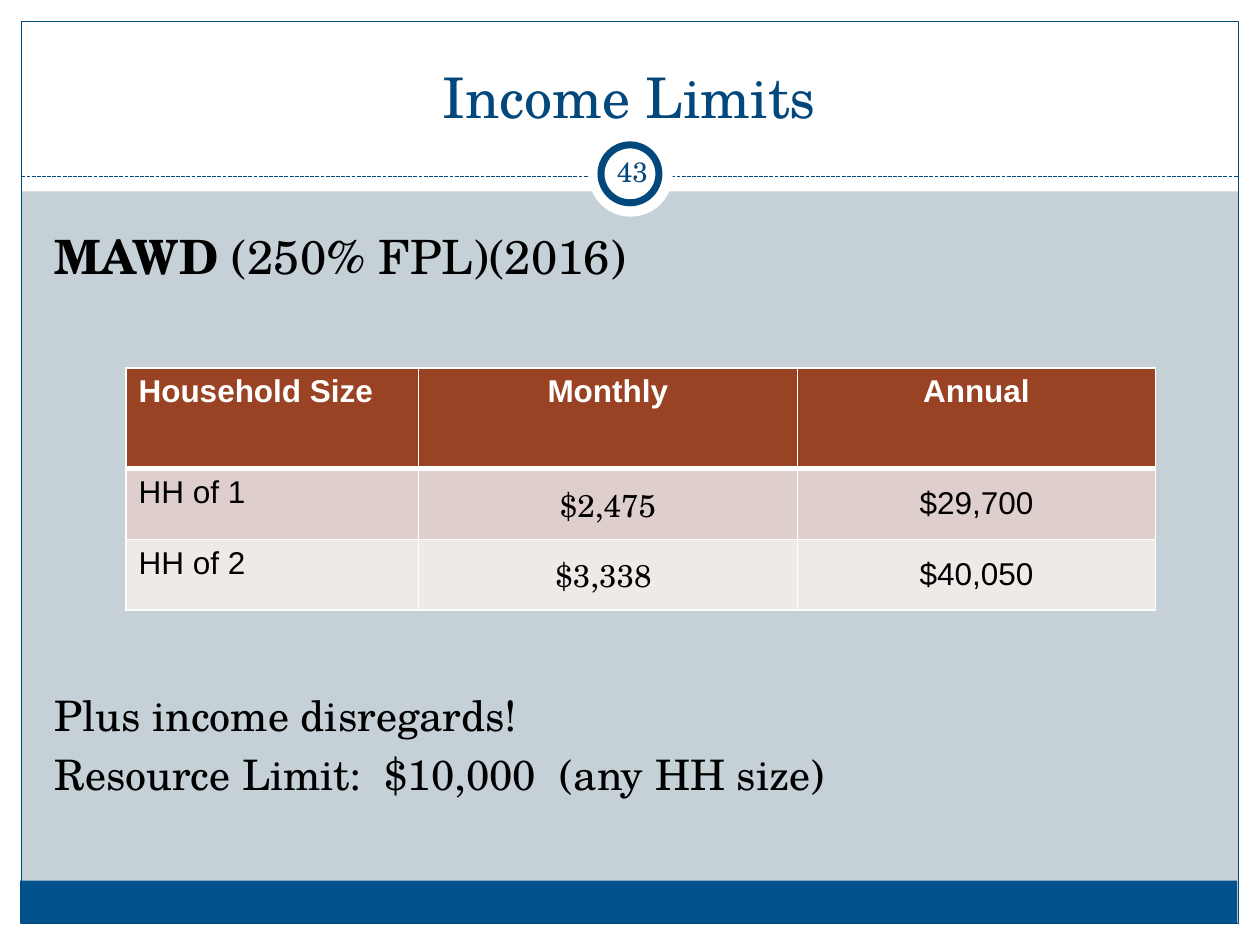
"""Build the Income Limits slide with its household table."""
import pptx
import pptx.util
import pptx.dml.color
import pptx.enum.dml
import pptx.enum.shapes
import pptx.enum.text
import pptx.oxml
import pptx.oxml.ns

Inches = pptx.util.Inches
Pt = pptx.util.Pt
ALIGN = pptx.enum.text.PP_ALIGN
ANCHOR = pptx.enum.text.MSO_ANCHOR
SHAPE = pptx.enum.shapes.MSO_SHAPE
SERIF, SANS = "TeX Gyre Schola", "Arial"
NAVY, WHITE, BLACK = "03487C", "FFFFFF", "000000"


def color(value):
    return pptx.dml.color.RGBColor.from_string(value)


def add_run(paragraph, text, value, **formats):
    run = paragraph.add_run()
    run.text = text
    run.font.color.rgb = color(value)
    for name, setting in formats.items():
        setattr(run.font, name, setting)


presentation = pptx.Presentation()
presentation.slide_width = Inches(10)
presentation.slide_height = Inches(7.5)
slide = presentation.slides.add_slide(presentation.slide_layouts[1])
slide.background.fill.solid()
slide.background.fill.fore_color.rgb = color("C5D1D7")
title, body = slide.placeholders

backdrop = [
    (SHAPE.RECTANGLE, 0, 7.33, 10, 0.17, WHITE, None),
    (SHAPE.RECTANGLE, 0, 0, 10, 1.52, WHITE, None),
    (SHAPE.RECTANGLE, 0, 0, 0.17, 7.5, WHITE, None),
    (SHAPE.RECTANGLE, 9.83, 0, 0.17, 7.5, WHITE, None),
    (SHAPE.RECTANGLE, 0.16, 6.99, 9.66, 0.34, "03528D", None),
    (SHAPE.RECTANGLE, 0.17, 0.17, 9.66, 7.16, None, 0.75),
    (SHAPE.OVAL, 4.67, 1.05, 0.67, 0.67, WHITE, None),
    (SHAPE.OVAL, 4.77, 1.15, 0.46, 0.46, WHITE, 4),
]
for kind, left, top, width, height, fill, line_width in backdrop:
    if kind == SHAPE.OVAL and line_width is None:
        divider = slide.shapes.add_connector(
            pptx.enum.shapes.MSO_CONNECTOR.STRAIGHT,
            Inches(0.17), Inches(1.4), Inches(9.83), Inches(1.4))
        divider.line.color.rgb = color(NAVY)
        divider.line.width = Pt(0.75)
        divider.line.dash_style = pptx.enum.dml.MSO_LINE.SQUARE_DOT
        divider.element.spPr.append(pptx.oxml.parse_xml(
            f'<a:effectLst {pptx.oxml.ns.nsdecls("a")}/>'))
    shape = slide.shapes.add_shape(kind, Inches(left), Inches(top), Inches(width), Inches(height))
    shape.shadow.inherit = False
    if fill:
        shape.fill.solid()
        shape.fill.fore_color.rgb = color(fill)
    else:
        shape.fill.background()
    if line_width:
        shape.line.color.rgb = color(NAVY)
        shape.line.width = Pt(line_width)
    else:
        shape.line.fill.background()

number = slide.shapes.add_textbox(0, 0, 0, 0)
text_places = [
    (title, 0.33, 0.25, 9.33, 0.83, ANCHOR.BOTTOM, 0.1),
    (body, 0.33, 1.75, 9.3, 5.42, ANCHOR.TOP, 0.1),
    (number, 4.77, 1.12, 0.5, 0.48, ANCHOR.MIDDLE, 0.05),
]
for shape, left, top, width, height, anchor, inset in text_places:
    shape.element.getparent().append(shape.element)
    shape.left, shape.top = Inches(left), Inches(top)
    shape.width, shape.height = Inches(width), Inches(height)
    frame_format = {
        "word_wrap": True, "auto_size": pptx.enum.text.MSO_AUTO_SIZE.NONE,
        "vertical_anchor": anchor, "margin_left": Inches(inset), "margin_right": Inches(inset),
        "margin_top": Inches(0.05), "margin_bottom": Inches(0.05),
    }
    for name, setting in frame_format.items():
        setattr(shape.text_frame, name, setting)

for shape, text, size in [(title, "Income Limits", 32), (number, "43", 16)]:
    paragraph = shape.text_frame.paragraphs[0]
    paragraph.alignment = ALIGN.CENTER
    add_run(paragraph, text, NAVY, name=SERIF, size=Pt(size))

body_lines = [
    (5.4, 27, [("MAWD ", True), ("(250% FPL)(2016)", False)]),
    (232, 24, [("Plus income disregards!", False)]),
    (4.8, 24, [("Resource Limit:  $10,000  (any HH size)", False)]),
]
for index, (space, size, runs) in enumerate(body_lines):
    paragraph = body.text_frame.add_paragraph() if index else body.text_frame.paragraphs[0]
    paragraph.space_before = Pt(space)
    properties = paragraph._p.get_or_add_pPr()
    properties.set("marL", "0")
    properties.set("indent", "0")
    properties.append(pptx.oxml.parse_xml(f'<a:buNone {pptx.oxml.ns.nsdecls("a")}/>'))
    for text, bold in runs:
        add_run(paragraph, text, BLACK, name=SERIF, size=Pt(size), bold=bold)

rows = [
    ("Household Size", "Monthly", "Annual"),
    ("HH of 1", "$2,475", "$29,700"),
    ("HH of 2", "$3,338 ", "$40,050"),
]
row_fills = ["994224", "DECFCD", "EFE9E8"]
table = slide.shapes.add_table(3, 3, Inches(1), Inches(2.92), Inches(8.17), Inches(1.92)).table
for column, width in zip(table.columns, [2.32, 3.01, 2.84]):
    column.width = Inches(width)
for row, height in zip(table.rows, [0.8, 0.56, 0.56]):
    row.height = Inches(height)
for row_index, texts in enumerate(rows):
    for column_index, text in enumerate(texts):
        cell = table.cell(row_index, column_index)
        header = row_index == 0
        monthly_value = column_index == 1 and not header
        heavy_side = {0: "B", 1: "T"}.get(row_index)
        for side in "LRTB":
            border_width = Pt(3 if side == heavy_side else 1)
            cell._tc.get_or_add_tcPr().append(pptx.oxml.parse_xml(
                f'<a:ln{side} {pptx.oxml.ns.nsdecls("a")} w="{border_width}"><a:solidFill>'
                f'<a:srgbClr val="{WHITE}"/></a:solidFill></a:ln{side}>'))
        cell.fill.solid()
        cell.fill.fore_color.rgb = color(row_fills[row_index])
        if column_index and not header:
            cell.vertical_anchor = ANCHOR.MIDDLE
        if monthly_value:
            cell.margin_left = cell.margin_right = cell.margin_top = Inches(0.01)
            cell.margin_bottom = 0
        paragraph = cell.text_frame.paragraphs[0]
        paragraph.alignment = ALIGN.CENTER if column_index else ALIGN.LEFT
        add_run(paragraph, text, WHITE if header else BLACK,
                name=SERIF if monthly_value else SANS, size=Pt(18), bold=header)

presentation.save("out.pptx")
